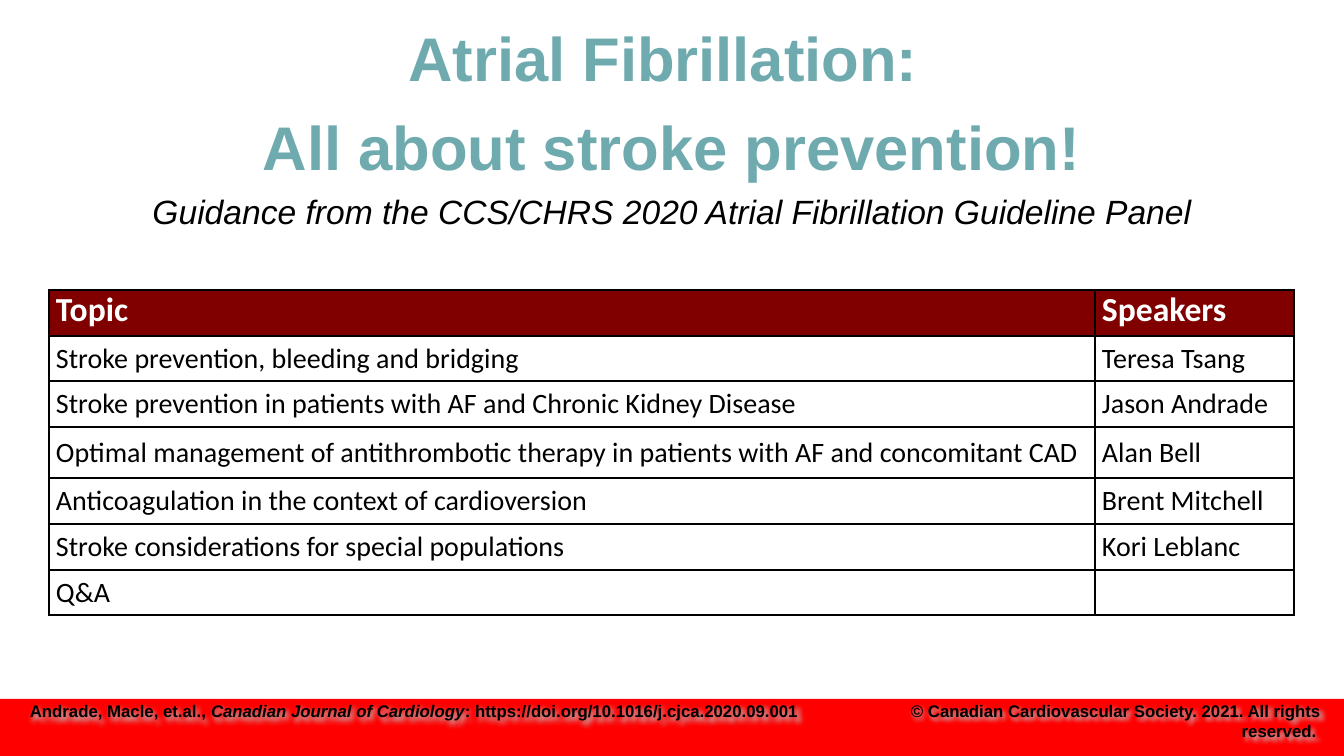
from dataclasses import dataclass

from lxml import etree
from pptx import Presentation
from pptx.dml.color import RGBColor
from pptx.enum.shapes import MSO_SHAPE
from pptx.enum.text import MSO_ANCHOR, MSO_AUTO_SIZE, PP_ALIGN
from pptx.oxml.ns import qn
from pptx.util import Emu, Pt

RECTANGLE = MSO_SHAPE.RECTANGLE
MIDDLE, TOP = MSO_ANCHOR.MIDDLE, MSO_ANCHOR.TOP
LEFT, CENTER, RIGHT = PP_ALIGN.LEFT, PP_ALIGN.CENTER, PP_ALIGN.RIGHT
NO_AUTOFIT = MSO_AUTO_SIZE.NONE
TITLE_ONLY = 5
SLIDE_WIDTH, SLIDE_HEIGHT = 1344, 756
EMU_PER_PX = 914400 / 100.8


@dataclass(frozen=True)
class Theme:
    """Colours, fonts and type sizes of the slide."""
    heading_font: str = "Arial"
    table_font: str = "Calibri"
    teal: str = "6FAAAF"
    black: str = "000000"
    white: str = "FFFFFF"
    maroon: str = "800000"
    red: str = "FF0000"
    halo: str = "C0C0C0"
    title_size: int = 44
    subtitle_size: int = 24
    header_size: int = 24
    body_size: int = 20
    footer_size: int = 12


THEME = Theme()

TITLE_LINES = ["Atrial Fibrillation: ", "All about stroke prevention!"]
SUBTITLE = "Guidance from the CCS/CHRS 2020 Atrial Fibrillation Guideline Panel"
AGENDA = [
    ("Topic", "Speakers"),
    ("Stroke prevention, bleeding and bridging", "Teresa Tsang"),
    ("Stroke prevention in patients with AF and Chronic Kidney Disease", "Jason Andrade"),
    ("Optimal management of antithrombotic therapy in patients with AF and concomitant CAD",
     "Alan Bell"),
    ("Anticoagulation in the context of cardioversion", "Brent Mitchell"),
    ("Stroke considerations for special populations", "Kori Leblanc"),
    ("Q&A", ""),
]
SPEAKER_WIDTH = 199
ROW_HEIGHTS = [46, 45, 46, 51, 46, 46, 45]
CITATION = [
    ("Andrade, Macle, et.al., ", False),
    ("Canadian Journal of Cardiology", True),
    (": https://doi.org/10.1016/j.cjca.2020.09.001", False),
]
COPYRIGHT = [("© Canadian Cardiovascular Society. 2021. All rights reserved. ", False)]


def px(length):
    """Turn pixels into EMU."""
    return Emu(round(length * EMU_PER_PX))


def set_font(paragraph, name, size, color, bold=False, italic=None):
    """Set the font of a whole paragraph."""
    font = paragraph.font
    font.name, font.size = name, Pt(size)
    font.bold, font.italic = bold, italic
    font.color.rgb = RGBColor.from_string(color)


def add_title(slide, left, top, width, height):
    """Fill the title placeholder with the heading lines and the subtitle."""
    title = slide.shapes.title
    title.left, title.top, title.width, title.height = map(px, (left, top, width, height))
    frame = title.text_frame
    frame.word_wrap, frame.auto_size = True, NO_AUTOFIT
    frame.vertical_anchor = MIDDLE
    frame.text = "\n".join([*TITLE_LINES, SUBTITLE])
    for paragraph in frame.paragraphs:
        paragraph.alignment, paragraph.line_spacing = CENTER, 1.2
        set_font(paragraph, THEME.heading_font, THEME.title_size, THEME.teal, bold=True)
    set_font(paragraph, THEME.heading_font, THEME.subtitle_size, THEME.black, italic=True)


def add_borders(cell):
    """Draw a thin black line on each side of a cell."""
    properties = cell._tc.get_or_add_tcPr()
    for position, side in enumerate(("lnL", "lnR", "lnT", "lnB")):
        line = etree.Element(qn(f"a:{side}"), w=str(Pt(1)))
        fill = etree.SubElement(line, qn("a:solidFill"))
        etree.SubElement(fill, qn("a:srgbClr"), val=THEME.black)
        properties.insert(position, line)


def format_cell(cell, text, is_header):
    """Write and style one cell of the agenda."""
    cell.text = text
    cell.margin_left = cell.margin_right = px(7)
    cell.margin_top = cell.margin_bottom = 0
    paragraph = cell.text_frame.paragraphs[0]
    if is_header:
        cell.vertical_anchor = TOP
        cell.fill.solid()
        cell.fill.fore_color.rgb = RGBColor.from_string(THEME.maroon)
        set_font(paragraph, THEME.table_font, THEME.header_size, THEME.white, bold=True)
    else:
        cell.vertical_anchor = MIDDLE
        cell.fill.background()
        set_font(paragraph, THEME.table_font, THEME.body_size, THEME.black)
    add_borders(cell)


def add_agenda(slide, left, top, width):
    """Add the table of topics and speakers."""
    box = map(px, (left, top, width, sum(ROW_HEIGHTS)))
    table = slide.shapes.add_table(len(AGENDA), 2, *box).table
    table.first_row = table.horz_banding = False
    table.columns[0].width = px(width - SPEAKER_WIDTH)
    table.columns[1].width = px(SPEAKER_WIDTH)
    for row_index, (texts, height) in enumerate(zip(AGENDA, ROW_HEIGHTS)):
        table.rows[row_index].height = px(height)
        for column_index, text in enumerate(texts):
            format_cell(table.cell(row_index, column_index), text, row_index == 0)


def add_footer_text(slide, left, top, width, runs, alignment):
    """Add one footer text with a soft shadow."""
    text_box = slide.shapes.add_textbox(*map(px, (left, top, width, 30)))
    text_box.text_frame.word_wrap = True
    paragraph = text_box.text_frame.paragraphs[0]
    paragraph.alignment = alignment
    set_font(paragraph, THEME.heading_font, THEME.footer_size, THEME.black, bold=True)
    for text, italic in runs:
        run = paragraph.add_run()
        run.text, run.font.italic = text, italic
    effects = etree.SubElement(text_box._element.spPr, qn("a:effectLst"))
    shadow = etree.SubElement(effects, qn("a:outerShdw"), blurRad=str(Pt(3)),
                              dist=str(Pt(2)), dir="2700000")
    etree.SubElement(shadow, qn("a:srgbClr"), val=THEME.halo)


def add_footer(slide, left, top, width, height):
    """Add the red band with the citation and the copyright line."""
    band = slide.shapes.add_shape(RECTANGLE, *map(px, (left, top, width, height)))
    band.shadow.inherit = False
    band.fill.solid()
    band.fill.fore_color.rgb = RGBColor.from_string(THEME.red)
    band.line.fill.background()
    add_footer_text(slide, left + 20, top - 3, 806, CITATION, LEFT)
    add_footer_text(slide, left + width - 467, top - 3, 454, COPYRIGHT, RIGHT)


def main():
    """Build the presentation and save it."""
    presentation = Presentation()
    presentation.slide_width, presentation.slide_height = px(SLIDE_WIDTH), px(SLIDE_HEIGHT)
    slide = presentation.slides.add_slide(presentation.slide_layouts[TITLE_ONLY])
    add_footer(slide, 0, 699, SLIDE_WIDTH, SLIDE_HEIGHT - 699)
    add_agenda(slide, 49, 290, 1245)
    add_title(slide, 61, 13, 1222, 210)
    presentation.save("out.pptx")


if __name__ == "__main__":
    main()
